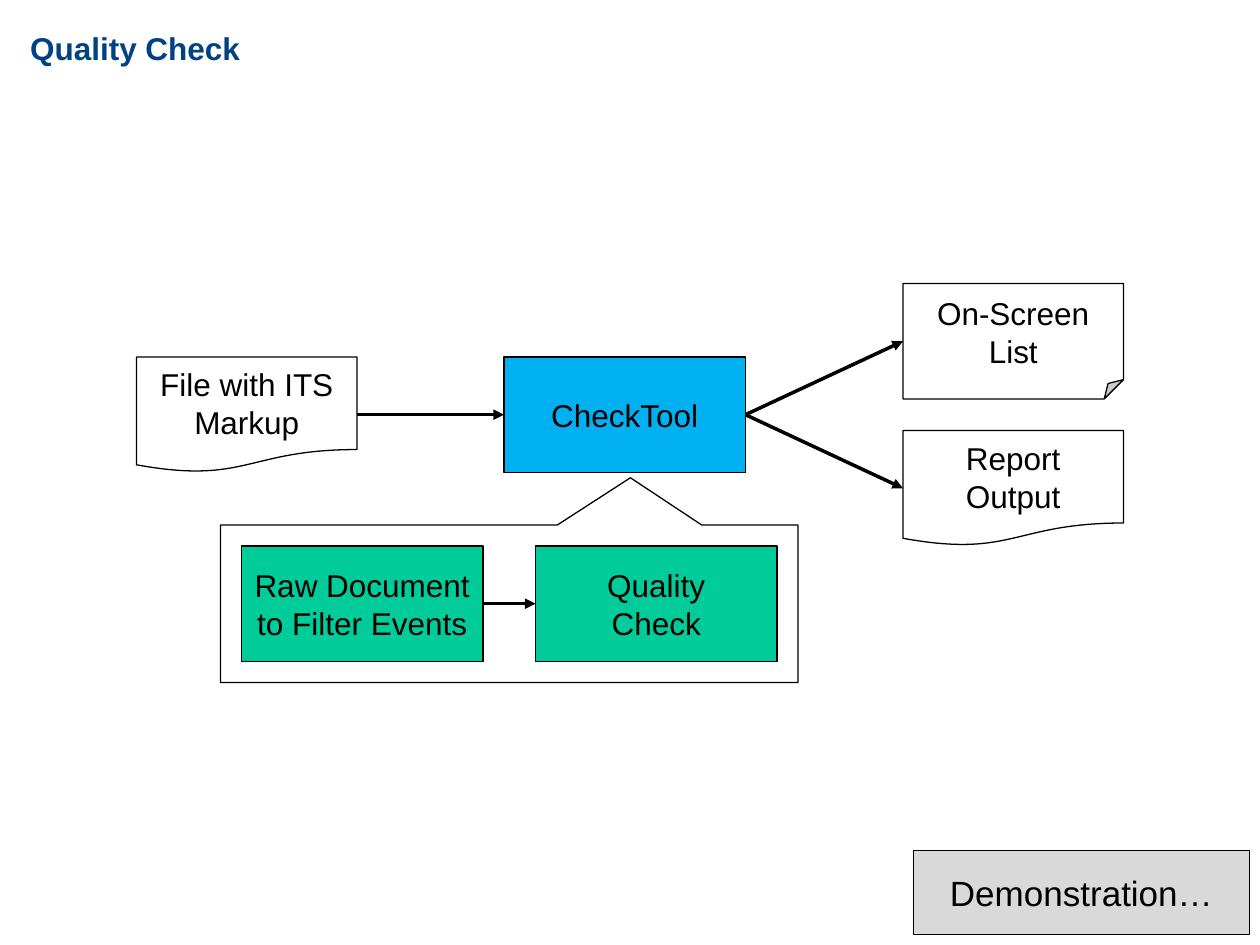
from pptx import Presentation
from pptx.dml.color import RGBColor
from pptx.enum.shapes import MSO_CONNECTOR as Line, MSO_SHAPE as Kind
from pptx.enum.text import MSO_ANCHOR as Anchor, MSO_AUTO_SIZE as Fit, PP_ALIGN as Align
from pptx.oxml.ns import qn
from pptx.util import Pt
from lxml.etree import SubElement


def color(code):
    return RGBColor.from_string(code)


def style(frame, size, code, align, bold=False):
    """Format all text in the frame."""
    for para in frame.paragraphs:
        para.alignment = align
        for run in para.runs:
            run.font.name = "Arial"
            run.font.size = Pt(size)
            run.font.bold = bold
            run.font.color.rgb = color(code)


deck = Presentation()
deck.slide_width, deck.slide_height = Pt(720), Pt(540)
slide = deck.slides.add_slide(deck.slide_layouts[5])
shapes = slide.shapes

# Title
title = shapes.title
title.left, title.top, title.width, title.height = Pt(10), Pt(13), Pt(135), Pt(29)
frame = title.text_frame
frame.text = "Quality Check"
frame.word_wrap = False
frame.auto_size = Fit.SHAPE_TO_FIT_TEXT
frame.vertical_anchor = Anchor.TOP
style(frame, 18, "004283", Align.LEFT, bold=True)

# Boxes: kind, left, top, width, height, fill, text size, text
high, page, step = 66, 126, 138
white, green = "FFFFFF", "00CC99"
boxes = [
    (Kind.RECTANGULAR_CALLOUT, 126, 300, 330, 90, None, 18, ""),
    (Kind.RECTANGLE, 138, 312, step, high, green, 18, "Raw Document to Filter Events"),
    (Kind.RECTANGLE, 306, 312, step, high, green, 18, "Quality\vCheck"),
    (Kind.FLOWCHART_DOCUMENT, 78, 204, page, high, white, 18, "File with ITS Markup"),
    (Kind.RECTANGLE, 288, 204, step, high, "00B0F0", 18, "CheckTool"),
    (Kind.FOLDED_CORNER, 516, 162, page, high, white, 18, "On-Screen\vList"),
    (Kind.FLOWCHART_DOCUMENT, 516, 246, page, high, white, 18, "Report\vOutput"),
    (Kind.ACTION_BUTTON_CUSTOM, 522, 486, 192, 48, "D9D9D9", 20, "Demonstration…"),
]
for kind, left, top, width, height, fill, size, text in boxes:
    box = shapes.add_shape(kind, Pt(left), Pt(top), Pt(width), Pt(height))
    box.shadow.inherit = False
    box.line.color.rgb = color("000000")
    box.line.width = Pt(0.75)
    if fill:
        box.fill.solid()
        box.fill.fore_color.rgb = color(fill)
    else:
        box.fill.background()
    if kind == Kind.RECTANGULAR_CALLOUT:
        box.adjustments[0], box.adjustments[1] = 0.21, -0.8
    if text:
        frame = box.text_frame
        frame.text = text
        frame.word_wrap = True
        frame.margin_left = frame.margin_right = Pt(4)
        frame.vertical_anchor = Anchor.MIDDLE
        style(frame, size, "000000", Align.CENTER)

# Arrows: start x, start y, end x, end y
arrows = [
    (204, 237, 288, 237),
    (426, 237, 516, 195),
    (426, 237, 516, 279),
    (276, 345, 306, 345),
]
for ends in arrows:
    arrow = shapes.add_connector(Line.STRAIGHT, *map(Pt, ends))
    arrow.line.color.rgb = color("000000")
    arrow.line.width = Pt(2)
    SubElement(arrow.line._get_or_add_ln(), qn("a:tailEnd"), type="triangle")
    SubElement(arrow._element.spPr, qn("a:effectLst"))

deck.save("out.pptx")
